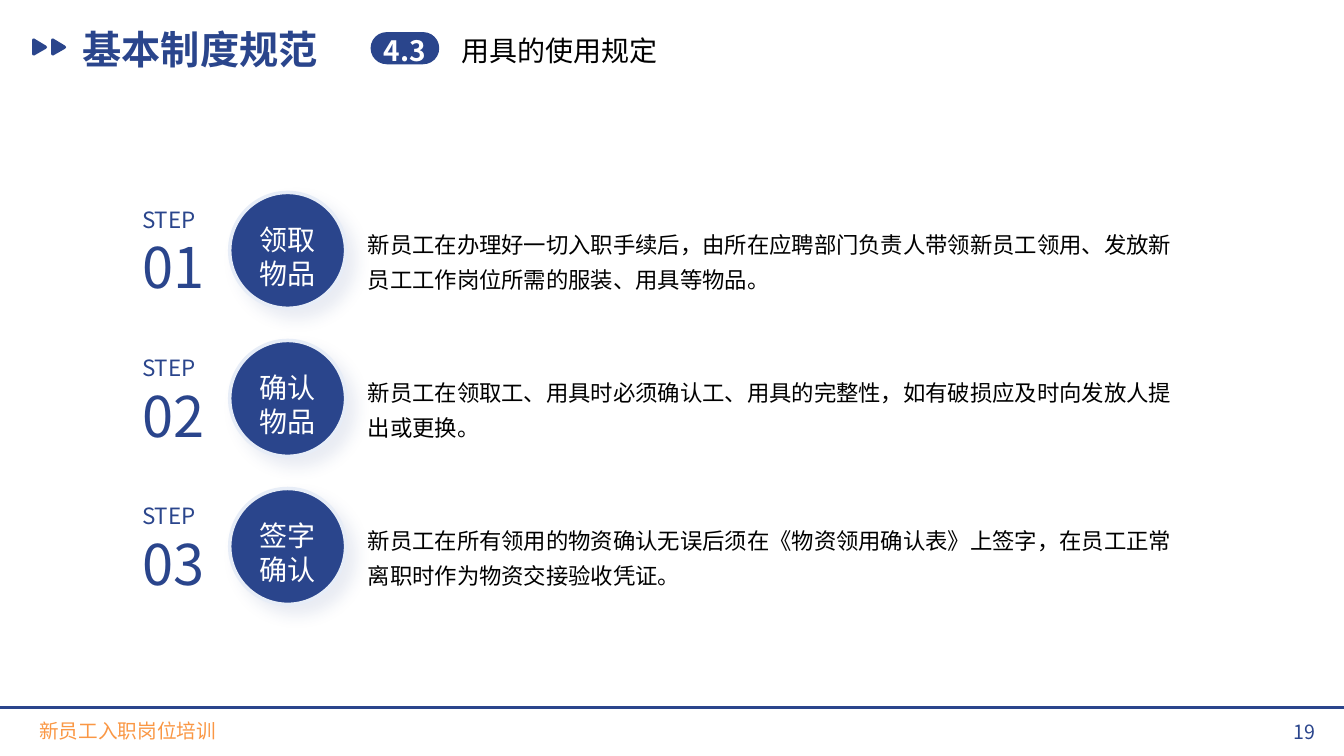
from lxml import etree
from pptx import Presentation
from pptx.dml.color import RGBColor
from pptx.enum.shapes import MSO_CONNECTOR, MSO_SHAPE
from pptx.enum.text import MSO_ANCHOR, MSO_AUTO_SIZE, PP_ALIGN
from pptx.oxml.ns import qn
from pptx.util import Cm, Pt

NAVY = RGBColor(0x2A, 0x45, 0x8C)
PALE_BLUE = RGBColor(0xE7, 0xED, 0xF7)
ORANGE = RGBColor(0xFA, 0x97, 0x44)
WHITE = RGBColor(0xFF, 0xFF, 0xFF)
BLACK = RGBColor(0, 0, 0)
FONT = "Noto Sans CJK SC"
LEFT, CENTER = PP_ALIGN.LEFT, PP_ALIGN.CENTER
TOP, MIDDLE = MSO_ANCHOR.TOP, MSO_ANCHOR.MIDDLE
NO_AUTOFIT = MSO_AUTO_SIZE.NONE
PILL = MSO_SHAPE.ROUNDED_RECTANGLE
STRAIGHT = MSO_CONNECTOR.STRAIGHT

SLIDE_WIDTH, SLIDE_HEIGHT = Cm(33.87), Cm(19.05)
STEP_PITCH = Cm(3.73)
ARROW_OUTLINE = [(0.05, 0), (0.35, 0.18), (0.38, 0.22), (0.35, 0.26), (0.05, 0.43),
                 (0.01, 0.42), (0, 0.39), (0, 0.04), (0.01, 0.01)]
STEPS = [
    ("领取\n物品", "新员工在办理好一切入职手续后，由所在应聘部门负责人带领新员工领用、"
     "发放新员工工作岗位所需的服装、用具等物品。"),
    ("确认物品", "新员工在领取工、用具时必须确认工、用具的完整性，如有破损应及时向"
     "发放人提出或更换。"),
    ("签字确认", "新员工在所有领用的物资确认无误后须在《物资领用确认表》上签字，"
     "在员工正常离职时作为物资交接验收凭证。"),
]


def write(shape, text, sizes, color, align=LEFT, anchor=TOP, bold=False, spacing=1.0):
    """Fill a shape with paragraphs, one size each (the last size repeats)."""
    frame = shape.text_frame
    frame.text = text
    frame.word_wrap = True
    frame.auto_size = NO_AUTOFIT
    frame.vertical_anchor = anchor
    for index, paragraph in enumerate(frame.paragraphs):
        paragraph.alignment = align
        paragraph.line_spacing = spacing
        paragraph.space_before = Pt(0)
        font = paragraph.font
        font.size = Pt(sizes[min(index, len(sizes) - 1)])
        font.bold = bold
        font.color.rgb = color
        font.name = FONT
        defaults = paragraph._p.pPr.find(qn("a:defRPr"))
        etree.SubElement(defaults, qn("a:ea"), typeface=FONT)


def add_label(slide, box, text, sizes, color, **options):
    """Add a text box with the given left, top, width and height."""
    write(slide.shapes.add_textbox(*box), text, sizes, color, **options)


def fill_plain(shape, color):
    """Give a shape a solid fill without outline or shadow."""
    shape.fill.solid()
    shape.fill.fore_color.rgb = color
    shape.line.fill.background()
    shape.shadow.inherit = False


def add_soft_shadow(shape):
    """Add a faint diagonal shadow to a shape."""
    shape.shadow.inherit = False
    effects = shape._element.spPr.find(qn("a:effectLst"))
    shadow = etree.SubElement(effects, qn("a:outerShdw"), blurRad=str(Pt(11)), dist=str(Pt(9)),
                              dir="2700000", algn="tl", rotWithShape="0")
    tint = etree.SubElement(shadow, qn("a:srgbClr"), val=str(NAVY))
    etree.SubElement(tint, qn("a:alpha"), val="9000")


def add_header(slide, left, top):
    """Place the double arrow, the title and the numbered section heading."""
    for arrow_left in (left, left + Cm(0.48)):
        points = [(arrow_left + Cm(x), top + Cm(0.46 + y)) for x, y in ARROW_OUTLINE]
        builder = slide.shapes.build_freeform(*points[0], scale=1.0)
        builder.add_line_segments(points[1:], close=True)
        fill_plain(builder.convert_to_shape(), NAVY)

    title = slide.shapes.title
    title.left, title.top, title.width, title.height = left + Cm(1.02), top, Cm(8.89), Cm(1.45)
    write(title, "基本制度规范", [28], NAVY, bold=True)

    section = slide.shapes.add_shape(PILL, left + Cm(8.53), top + Cm(0.3), Cm(1.73), Cm(0.81))
    section.adjustments[0] = 0.5
    fill_plain(section, NAVY)
    write(section, "4.3", [20], WHITE, align=CENTER, anchor=MIDDLE, bold=True)
    frame = section.text_frame
    frame.margin_left = frame.margin_right = frame.margin_bottom = 0
    frame.margin_top = Cm(0.1)

    heading_box = (left + Cm(10.57), top + Cm(0.2), Cm(7.52), Cm(1.12))
    add_label(slide, heading_box, "用具的使用规定", [20], BLACK)


def add_step(slide, left, top, number, name, description):
    """Place one step: its number, its named circle and its description."""
    circle = slide.shapes.add_shape(PILL, left + Cm(2.46), top, Cm(2.92), Cm(2.92))
    circle.adjustments[0] = 0.5
    fill_plain(circle, NAVY)
    circle.line.color.rgb = PALE_BLUE
    circle.line.width = Pt(2.5)
    add_soft_shadow(circle)
    write(circle, name, [20], WHITE, align=CENTER, anchor=MIDDLE)
    frame = circle.text_frame
    frame.margin_left = frame.margin_right = Cm(0.2)
    frame.margin_top, frame.margin_bottom = Cm(0.3), 0

    add_label(slide, (left, top + Cm(0.22), Cm(2.67), Cm(2.64)),
              f"STEP\n{number:02d}", [16, 40], NAVY)
    add_label(slide, (left + Cm(5.69), top + Cm(0.65), Cm(21.26), Cm(1.96)),
              description, [16], BLACK, spacing=1.3)


def add_footer(slide, top):
    """Place the rule, the course name and the page number."""
    rule = slide.shapes.add_connector(STRAIGHT, 0, top, SLIDE_WIDTH, top)
    rule.line.color.rgb = NAVY
    rule.line.width = Pt(2.5)
    etree.SubElement(rule._element.spPr, qn("a:effectLst"))
    add_label(slide, (Cm(0.74), top + Cm(0.15), Cm(5.31), Cm(0.86)),
              "新员工入职岗位培训", [14], ORANGE)
    add_label(slide, (Cm(32.21), top + Cm(0.18), Cm(1.35), Cm(1.02)),
              "19", [14], NAVY, align=CENTER)


def main():
    """Build and save the slide."""
    deck = Presentation()
    deck.slide_width, deck.slide_height = SLIDE_WIDTH, SLIDE_HEIGHT
    slide = deck.slides.add_slide(deck.slide_layouts[5])
    add_footer(slide, Cm(17.83))
    add_header(slide, Cm(0.81), Cm(0.51))
    for index, (name, description) in enumerate(STEPS):
        add_step(slide, Cm(3.33), Cm(4.85) + index * STEP_PITCH, index + 1, name, description)
    deck.save("out.pptx")


if __name__ == "__main__":
    main()
